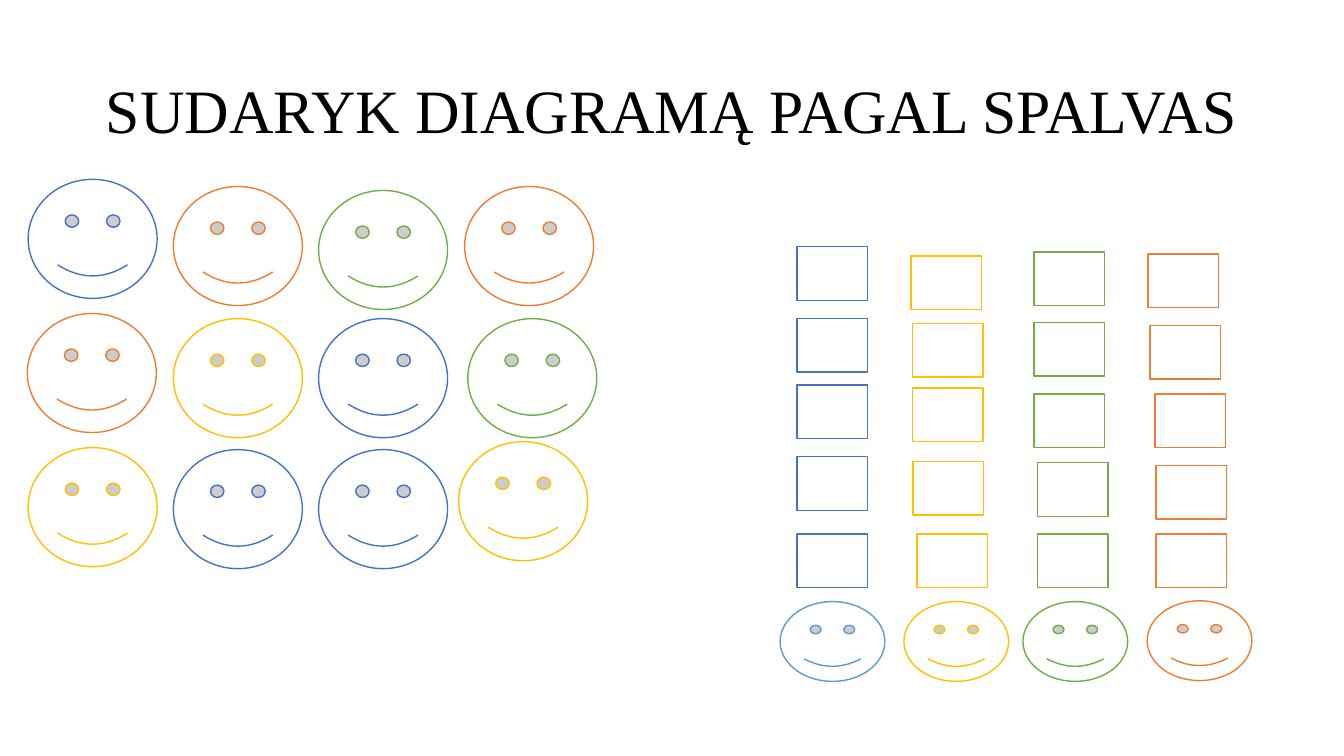
"""Build a slide where pupils chart coloured smiley faces."""
from pptx import Presentation
from pptx.dml.color import RGBColor
from pptx.enum.shapes import MSO_SHAPE as Preset
from pptx.enum.text import MSO_ANCHOR as Anchor, PP_ALIGN as Align
from pptx.util import Cm, Pt

BLUE = RGBColor(0x44, 0x72, 0xC4)
LIGHT_BLUE = RGBColor(0x5B, 0x9B, 0xD5)
ORANGE = RGBColor(0xED, 0x7D, 0x31)
GREEN = RGBColor(0x70, 0xAD, 0x47)
YELLOW = RGBColor(0xFF, 0xC0, 0x00)
WHITE = RGBColor(0xFF, 0xFF, 0xFF)
BLACK = RGBColor(0, 0, 0)

TITLE = "SUDARYK DIAGRAMĄ PAGAL SPALVAS"
FACE_SIZE = (3.25, 3)
LEGEND_SIZE = (2.64, 2.01)
BOX_SIZE = (1.78, 1.35)

FACES = {
    BLUE: [(0.71, 4.52), (8.03, 8.03), (4.37, 11.33), (8.03, 11.33)],
    ORANGE: [(4.37, 4.7), (11.71, 4.7), (0.69, 7.9)],
    GREEN: [(8.03, 4.8), (11.79, 8.03)],
    YELLOW: [(4.37, 8.03), (0.71, 11.28), (11.56, 11.13)],
}
LEGEND = {
    LIGHT_BLUE: [(19.66, 15.16)],
    YELLOW: [(22.78, 15.16)],
    GREEN: [(25.78, 15.16)],
    ORANGE: [(28.91, 15.14)],
}
BOXES = {
    BLUE: [(20.09, top) for top in (6.22, 8.03, 9.7, 11.51, 13.46)],
    YELLOW: [(22.96, 6.45), (22.99, 8.15), (22.99, 9.78), (23.01, 11.63), (23.11, 13.46)],
    GREEN: [(26.06, 6.35), (26.06, 8.13), (26.06, 9.93), (26.14, 11.66), (26.14, 13.46)],
    ORANGE: [(28.93, 6.4), (28.98, 8.2), (29.11, 9.93), (29.13, 11.73), (29.13, 13.46)],
}


def add_title(slide):
    box = slide.shapes.add_textbox(Cm(2.33), Cm(1.01), Cm(29.21), Cm(3.68))
    frame = box.text_frame
    frame.word_wrap = True
    frame.vertical_anchor = Anchor.MIDDLE
    paragraph = frame.paragraphs[0]
    paragraph.text = TITLE
    paragraph.alignment = Align.CENTER
    paragraph.line_spacing = 0.9
    paragraph.font.name = "Times New Roman"
    paragraph.font.size = Pt(44)
    paragraph.font.color.rgb = BLACK


def add_group(slide, preset, size, places_by_color):
    width, height = size
    for color, places in places_by_color.items():
        for left, top in places:
            shape = slide.shapes.add_shape(preset, Cm(left), Cm(top), Cm(width), Cm(height))
            shape.shadow.inherit = False
            shape.fill.solid()
            shape.fill.fore_color.rgb = WHITE
            shape.line.color.rgb = color
            shape.line.width = Pt(1)


def main():
    presentation = Presentation()
    presentation.slide_width, presentation.slide_height = Cm(33.87), Cm(19.05)
    slide = presentation.slides.add_slide(presentation.slide_layouts[6])
    add_title(slide)
    add_group(slide, Preset.SMILEY_FACE, FACE_SIZE, FACES)
    add_group(slide, Preset.SMILEY_FACE, LEGEND_SIZE, LEGEND)
    add_group(slide, Preset.RECTANGLE, BOX_SIZE, BOXES)
    presentation.save("out.pptx")


if __name__ == "__main__":
    main()
